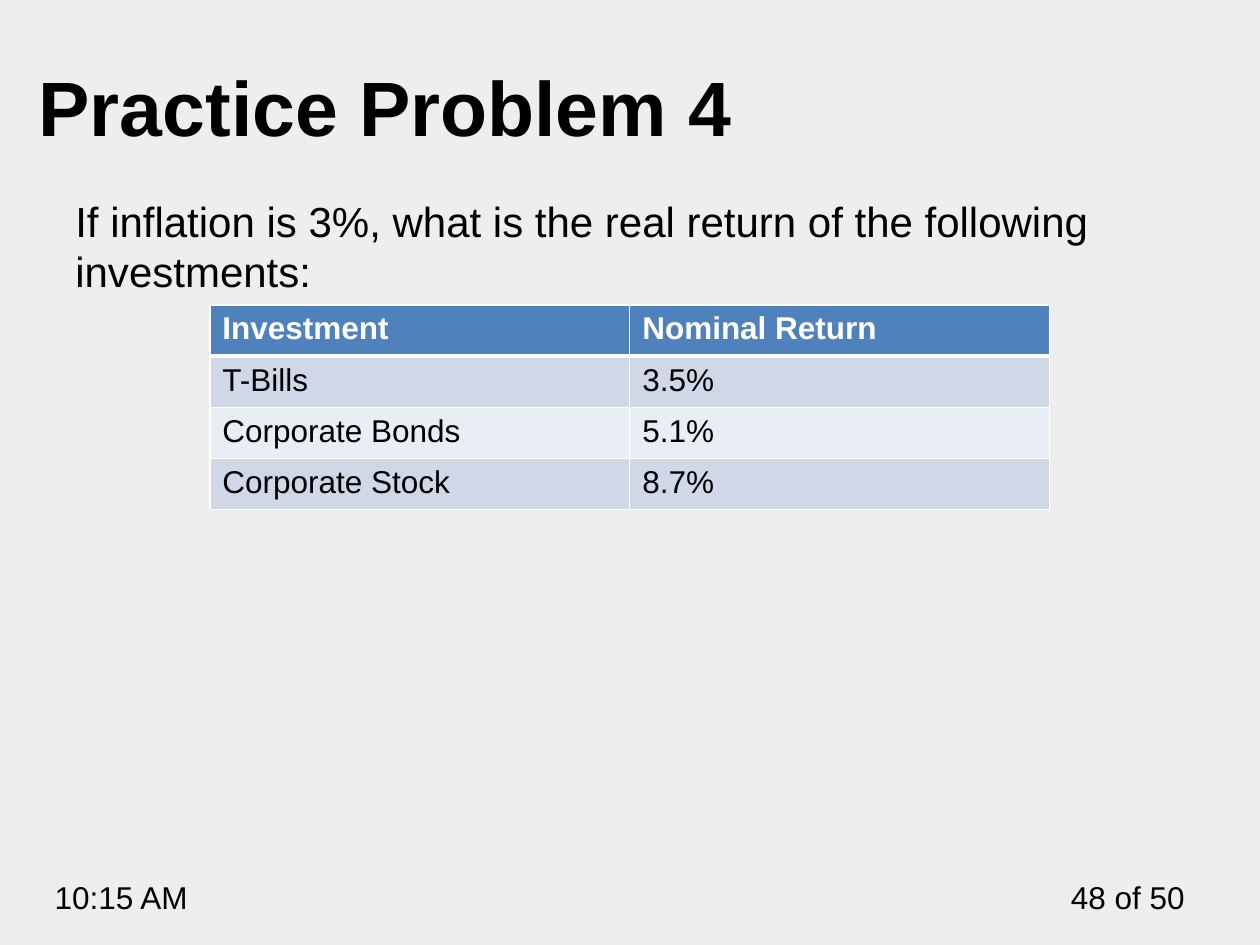
"""Build the Practice Problem 4 slide on real investment returns."""
import pptx
import pptx.dml.color
import pptx.enum.text
import pptx.oxml
import pptx.oxml.ns
import pptx.util

Cm = pptx.util.Cm
Pt = pptx.util.Pt
RGBColor = pptx.dml.color.RGBColor
Align = pptx.enum.text.PP_ALIGN
Anchor = pptx.enum.text.MSO_ANCHOR

BACKGROUND = RGBColor(0xEE, 0xEE, 0xEE)
BLACK = RGBColor(0, 0, 0)
WHITE = RGBColor(0xFF, 0xFF, 0xFF)
HEADER_BLUE = RGBColor(0x4F, 0x81, 0xBD)
BAND_DARK = RGBColor(0xD0, 0xD8, 0xE8)
BAND_LIGHT = RGBColor(0xE9, 0xED, 0xF4)


def write(para, text, size, color=BLACK, bold=False):
    span = para.add_run()
    span.text = text
    span.font.color.rgb = color
    formats = {"name": "Arial", "size": Pt(size), "bold": bold}
    for name, value in formats.items():
        setattr(span.font, name, value)


def add_border(cell, side, points):
    cell._tc.get_or_add_tcPr().append(pptx.oxml.parse_xml(
        f'<a:{side} {pptx.oxml.ns.nsdecls("a")} w="{Pt(points)}">'
        f'<a:solidFill><a:srgbClr val="{WHITE}"/></a:solidFill></a:{side}>'))


deck = pptx.Presentation()
deck.slide_width = Cm(25.4)
deck.slide_height = Cm(19.05)
page = deck.slides.add_slide(deck.slide_layouts[6])
page.background.fill.solid()
page.background.fill.fore_color.rgb = BACKGROUND

QUESTION = "If inflation is 3%, what is the real return of the following investments:"
texts = [
    ("48 of 50", (21.17, 17.57, 2.96, 1.03), 18, False, Align.RIGHT, Anchor.TOP),
    ("10:15 AM", (0.85, 17.57, 4.02, 1.03), 18, False, Align.LEFT, Anchor.TOP),
    ("Practice Problem 4", (0.53, 0.64, 22.28, 2.54), 44, True, Align.LEFT, Anchor.BOTTOM),
    (QUESTION, (1.27, 3.81, 22.44, 13.76), 24, False, Align.LEFT, Anchor.TOP),
]
for text, place, size, bold, align, anchor in texts:
    box = page.shapes.add_textbox(*map(Cm, place))
    for name, value in {"word_wrap": True, "vertical_anchor": anchor}.items():
        setattr(box.text_frame, name, value)
    para = box.text_frame.paragraphs[0]
    para.alignment = align
    write(para, text, size, bold=bold)

returns = [
    ("Investment", "Nominal Return"),
    ("T-Bills", "3.5%"),
    ("Corporate Bonds", "5.1%"),
    ("Corporate Stock", "8.7%"),
]
table = page.shapes.add_table(
    len(returns), 2, Cm(4.23), Cm(6.15), Cm(16.93), Cm(4.12)).table
for row, values in enumerate(returns):
    header = row == 0
    band = HEADER_BLUE if header else (BAND_LIGHT, BAND_DARK)[row % 2]
    borders = {"lnL": 1, "lnR": 1, "lnT": 3 if row == 1 else 1, "lnB": 3 if header else 1}
    for column, text in enumerate(values):
        cell = table.cell(row, column)
        for side, points in borders.items():
            add_border(cell, side, points)
        cell.fill.solid()
        cell.fill.fore_color.rgb = band
        write(cell.text_frame.paragraphs[0], text, 18, WHITE if header else BLACK, header)

deck.save("out.pptx")
